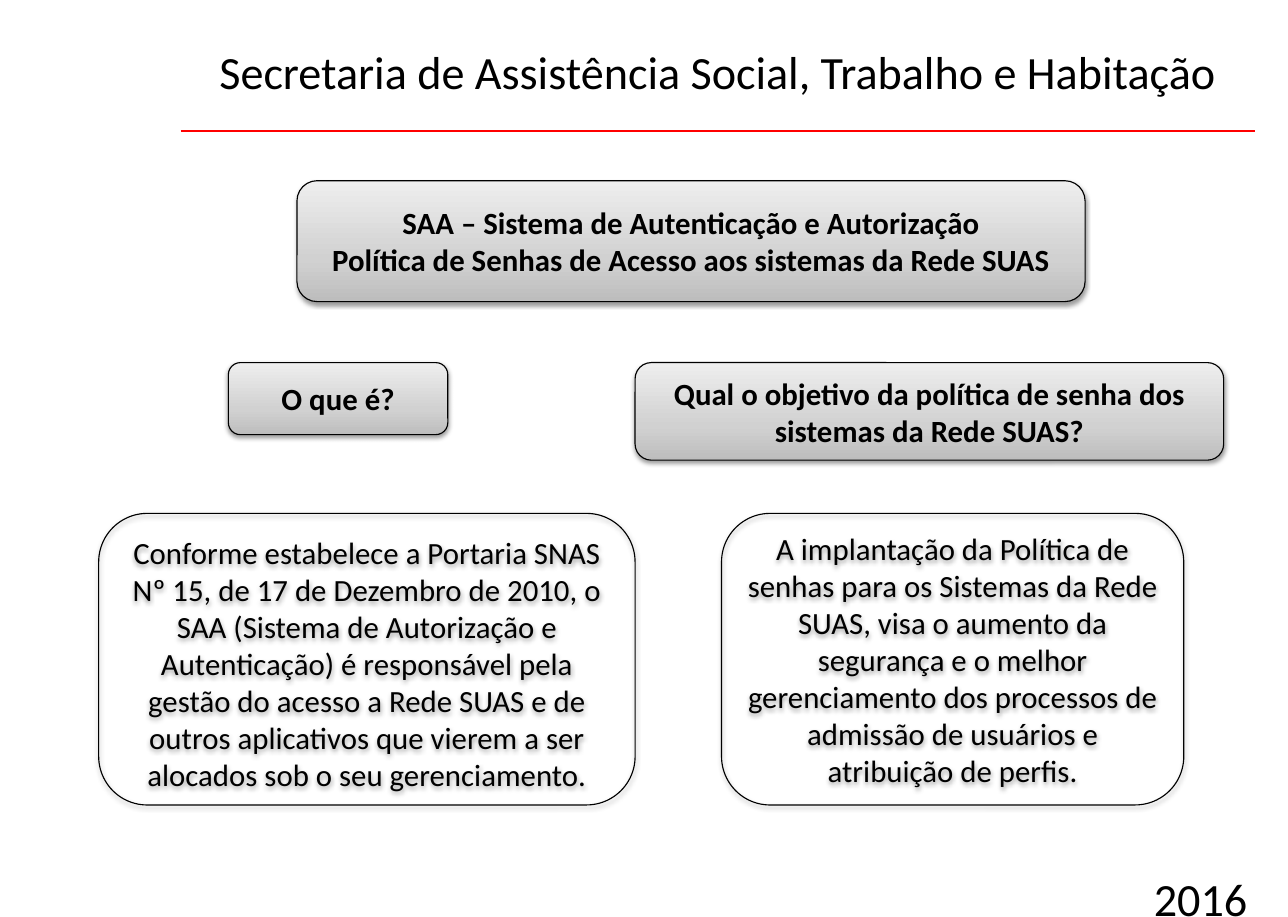
from dataclasses import dataclass, field

from lxml import etree
from pptx import Presentation
from pptx.dml.color import RGBColor
from pptx.enum.shapes import MSO_CONNECTOR, MSO_SHAPE
from pptx.enum.text import MSO_ANCHOR, PP_ALIGN
from pptx.oxml.ns import qn
from pptx.shapes.autoshape import Shape
from pptx.slide import Slide
from pptx.text.text import TextFrame
from pptx.util import Inches, Length, Pt

ROUNDED = MSO_SHAPE.ROUNDED_RECTANGLE
STRAIGHT = MSO_CONNECTOR.STRAIGHT
MIDDLE, TOP = MSO_ANCHOR.MIDDLE, MSO_ANCHOR.TOP
CENTER, LEFT = PP_ALIGN.CENTER, PP_ALIGN.LEFT
SLIDE_WIDTH, SLIDE_HEIGHT = Inches(11.62), Inches(8.27)


@dataclass(frozen=True)
class Theme:
    font: str = "Calibri"
    ink: str = "000000"
    rule: str = "FF0000"
    # Position in percent and colour, from the bottom of the box upwards
    gradient: tuple[tuple[int, str], ...] = ((0, "BDBDBD"), (35, "D1D1D1"), (100, "EEEEEE"))
    heading_size: float = 30
    box_size: float = 20
    rule_width: float = 1.5
    outline_width: float = 0.75
    shadow_blur: float = 3.15
    shadow_distance: float = 1.57
    shadow_opacity: int = 38


THEME = Theme()


@dataclass(frozen=True)
class Area:
    """A rectangle in percent of the slide's width and height."""
    left: float
    top: float
    width: float
    height: float

    def lengths(self) -> tuple[Length, Length, Length, Length]:
        return (across(self.left), down(self.top), across(self.width), down(self.height))


@dataclass(frozen=True)
class Heading:
    text: str
    area: Area


@dataclass(frozen=True)
class Box:
    lines: tuple[str, ...]
    area: Area
    is_title: bool = True
    frame_format: dict[str, Length] = field(default_factory=dict)


HEADINGS = (
    Heading("Secretaria de Assistência Social, Trabalho e Habitação", Area(16.09, 3.99, 81.07, 7.5)),
    Heading("2016", Area(88.64, 94.2, 11.36, 7.5)),
)

QUESTION_TOP = 39.54
ANSWER_TOP, ANSWER_HEIGHT = 55.99, 31.8
BOXES = (
    Box(("SAA – Sistema de Autenticação e Autorização",
         "Política de Senhas de Acesso aos sistemas da Rede SUAS"),
        Area(23.06, 19.71, 61.19, 13.18)),
    Box(("O que é?",), Area(17.73, QUESTION_TOP, 17.04, 7.86)),
    Box(("Qual o objetivo da política de senha dos sistemas da Rede SUAS?",),
        Area(49.31, QUESTION_TOP, 45.7, 10.64)),
    Box(("Conforme estabelece a Portaria SNAS Nº 15, de 17 de Dezembro de 2010, o SAA "
         "(Sistema de Autorização e Autenticação) é responsável pela gestão do acesso a "
         "Rede SUAS e de outros aplicativos que vierem a ser alocados sob o seu "
         "gerenciamento.",),
        Area(7.66, ANSWER_TOP, 41.65, ANSWER_HEIGHT), False, {"margin_top": Inches(0.12)}),
    Box(("A implantação da Política de senhas para os Sistemas da Rede SUAS, visa o "
         "aumento da segurança e o melhor gerenciamento dos processos de admissão de "
         "usuários e atribuição de perfis.",),
        Area(56.02, ANSWER_TOP, 35.89, ANSWER_HEIGHT), False),
)


def across(percent: float) -> Length:
    return Length(round(SLIDE_WIDTH * percent / 100))


def down(percent: float) -> Length:
    return Length(round(SLIDE_HEIGHT * percent / 100))


def apply(target: object, values: dict) -> None:
    for name, value in values.items():
        setattr(target, name, value)


def write(frame: TextFrame, lines: tuple[str, ...], alignment: PP_ALIGN,
          size: float, bold: bool = False) -> None:
    for index, line in enumerate(lines):
        paragraph = frame.add_paragraph() if index else frame.paragraphs[0]
        paragraph.alignment = alignment
        run = paragraph.add_run()
        run.text = line
        apply(run.font, {"name": THEME.font, "size": Pt(size), "bold": bold})
        run.font.color.rgb = RGBColor.from_string(THEME.ink)


def add_color(parent: etree._Element, color: str) -> etree._Element:
    return etree.SubElement(parent, qn("a:srgbClr"), val=color)


def fill_gradient(shape: Shape) -> None:
    shape.fill.gradient()
    shape.fill.gradient_angle = 90
    stops = shape._element.spPr.find(qn("a:gradFill")).find(qn("a:gsLst"))
    for stop in list(stops):
        stops.remove(stop)
    for position, color in THEME.gradient:
        add_color(etree.SubElement(stops, qn("a:gs"), pos=str(position * 1000)), color)


def add_shadow(shape: Shape) -> None:
    shape.shadow.inherit = False
    effects = shape._element.spPr.find(qn("a:effectLst"))
    shadow = etree.SubElement(effects, qn("a:outerShdw"), {
        "blurRad": str(Pt(THEME.shadow_blur)), "dist": str(Pt(THEME.shadow_distance)),
        "dir": "5400000", "rotWithShape": "0"})
    etree.SubElement(add_color(shadow, THEME.ink), qn("a:alpha"),
                     val=str(THEME.shadow_opacity * 1000))


def draw_rule(slide: Slide, left: float, right: float, top: float) -> None:
    rule = slide.shapes.add_connector(STRAIGHT, across(left), down(top), across(right), down(top))
    rule.line.color.rgb = RGBColor.from_string(THEME.rule)
    rule.line.width = Pt(THEME.rule_width)
    etree.SubElement(rule._element.spPr, qn("a:effectLst"))


def draw_heading(slide: Slide, heading: Heading) -> None:
    frame = slide.shapes.add_textbox(*heading.area.lengths()).text_frame
    apply(frame, {"word_wrap": True, "vertical_anchor": TOP,
                  "margin_left": Inches(0.11), "margin_right": Inches(0.11),
                  "margin_top": Inches(0.06), "margin_bottom": Inches(0.06)})
    write(frame, (heading.text,), LEFT, THEME.heading_size)


def draw_box(slide: Slide, box: Box) -> None:
    shape = slide.shapes.add_shape(ROUNDED, *box.area.lengths())
    if box.is_title:
        fill_gradient(shape)
    else:
        shape.fill.background()
    shape.line.color.rgb = RGBColor.from_string(THEME.ink)
    shape.line.width = Pt(THEME.outline_width)
    add_shadow(shape)
    apply(shape.text_frame, {"word_wrap": True, "vertical_anchor": MIDDLE} | box.frame_format)
    write(shape.text_frame, box.lines, CENTER, THEME.box_size, box.is_title)


def main() -> None:
    presentation = Presentation()
    apply(presentation, {"slide_width": SLIDE_WIDTH, "slide_height": SLIDE_HEIGHT})
    slide = presentation.slides.add_slide(presentation.slide_layouts[6])

    # Header rule, department name and year
    draw_rule(slide, 14.03, 97.42, 14.27)
    for heading in HEADINGS:
        draw_heading(slide, heading)

    # Topic, questions and answers
    for box in BOXES:
        draw_box(slide, box)

    presentation.save("out.pptx")


if __name__ == "__main__":
    main()
